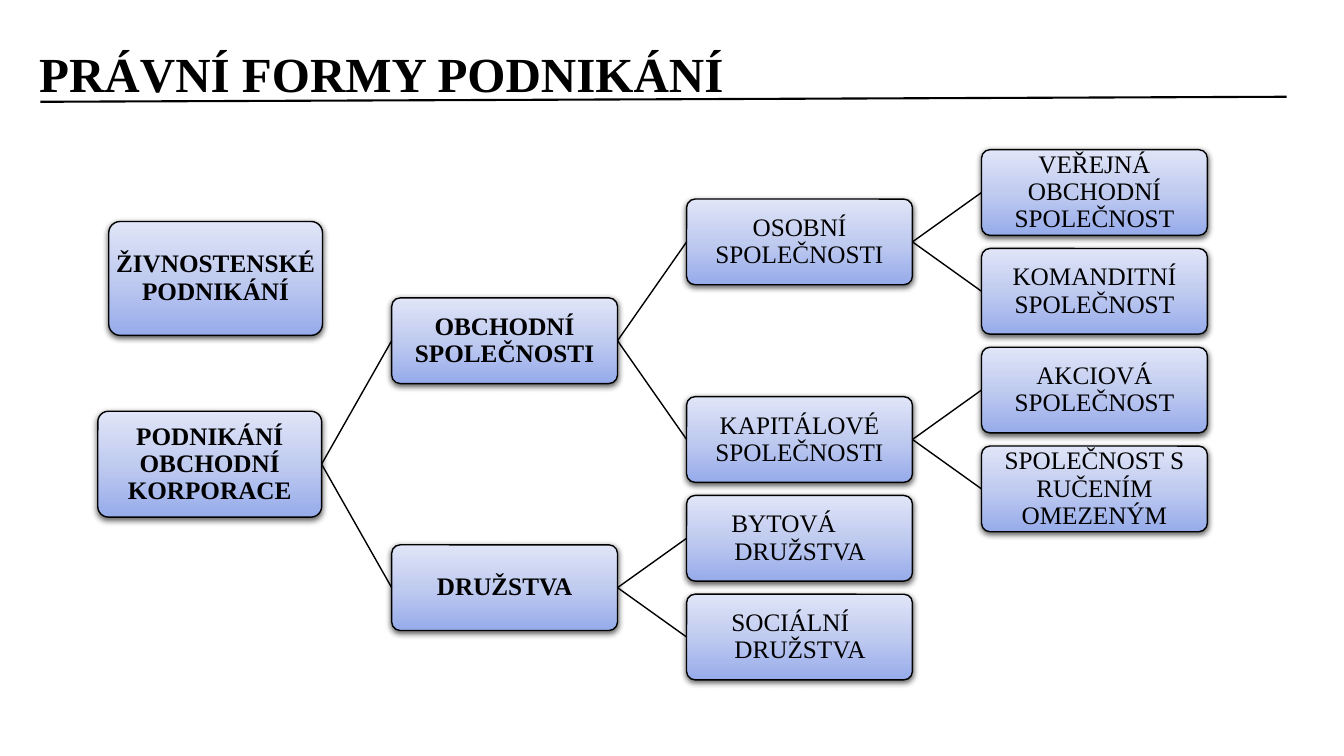
from copy import deepcopy
from dataclasses import dataclass
from typing import Optional

from lxml import etree
from pptx import Presentation, util as u
from pptx.dml.color import RGBColor
from pptx.enum import shapes, text
from pptx.oxml import ns

COLORS = {"ink": "000000", "deep": "96ABEA", "middle": "C0CBF0", "pale": "E0E5F7"}
FONT = "Times New Roman"

# Grid of box centres, in inches
FIRST_X, COLUMN = 2.08, 2.925
FIRST_Y, ROW = 1.91, 0.98
BOX_W, BOX_H = 2.24, 0.85


@dataclass(frozen=True)
class Form:
    """A legal form, centred on a column and a row of the grid."""
    label: str
    column: float
    row: float
    parent: Optional[str] = None
    bold: bool = False
    width: float = BOX_W
    height: float = BOX_H
    indent: float = 0


TRADE = "ŽIVNOSTENSKÉ PODNIKÁNÍ"
CORPORATE = "PODNIKÁNÍ OBCHODNÍ KORPORACE"
COMPANIES = "OBCHODNÍ SPOLEČNOSTI"
COOPERATIVES = "DRUŽSTVA"
PERSONAL = "OSOBNÍ SPOLEČNOSTI"
CAPITAL = "KAPITÁLOVÉ SPOLEČNOSTI"

FORMS = [
    Form(TRADE, 0.02, 0.87, bold=True, width=2.12, height=1.13),
    Form(CORPORATE, 0, 2.75, bold=True, width=2.22, height=1.05),
    Form(COMPANIES, 1, 1.5, CORPORATE, bold=True),
    Form(COOPERATIVES, 1, 4, CORPORATE, bold=True),
    Form(PERSONAL, 2, 0.5, COMPANIES),
    Form(CAPITAL, 2, 2.5, COMPANIES),
    Form("BYTOVÁ DRUŽSTVA", 2, 3.5, COOPERATIVES, indent=0.44),
    Form("SOCIÁLNÍ DRUŽSTVA", 2, 4.5, COOPERATIVES, indent=0.44),
    Form("VEŘEJNÁ OBCHODNÍ SPOLEČNOST", 3, 0, PERSONAL),
    Form("KOMANDITNÍ SPOLEČNOST", 3, 1, PERSONAL),
    Form("AKCIOVÁ SPOLEČNOST", 3, 2, CAPITAL),
    Form("SPOLEČNOST S RUČENÍM OMEZENÝM", 3, 3, CAPITAL),
]


def set_all(target, values: dict) -> None:
    for name, value in values.items():
        setattr(target, name, value)


def color(name: str) -> RGBColor:
    return RGBColor.from_string(COLORS[name])


def write(box, label: str, size: float, bold: bool, align, inset_x: float, inset_y: float):
    """Fill the box with one paragraph and return that paragraph."""
    frame = box.text_frame
    set_all(frame, {
        "word_wrap": True, "vertical_anchor": text.MSO_ANCHOR.MIDDLE,
        "margin_left": u.Inches(inset_x), "margin_right": u.Inches(inset_x),
        "margin_top": u.Inches(inset_y), "margin_bottom": u.Inches(inset_y),
    })
    para = frame.paragraphs[0]
    set_all(para, {"alignment": align, "line_spacing": 0.9})
    span = para.add_run()
    span.text = label
    set_all(span.font, {"name": FONT, "size": u.Pt(size), "bold": bold})
    span.font.color.rgb = color("ink")
    return para


def shade(box) -> None:
    """Give the box its three-stop gradient and soft shadow."""
    fill = box.fill
    fill.gradient()
    fill.gradient_angle = 90
    first = box._element.spPr.find(".//" + ns.qn("a:gs"))
    first.addnext(deepcopy(first))
    for stop, name, position in zip(fill.gradient_stops, ("deep", "middle", "pale"), (0, 0.5, 1)):
        stop.color.rgb = color(name)
        stop.position = position
    box.shadow.inherit = False
    effects = box._element.spPr.find(ns.qn("a:effectLst"))
    shadow = etree.SubElement(effects, ns.qn("a:outerShdw"), {
        "blurRad": str(u.Pt(4.5)), "dist": str(u.Pt(1.5)),
        "dir": "5400000", "algn": "ctr", "rotWithShape": "0"})
    tone = etree.SubElement(shadow, ns.qn("a:srgbClr"), val=COLORS["ink"])
    etree.SubElement(tone, ns.qn("a:alpha"), val="63000")


def add_form(page, form: Form):
    left = FIRST_X + form.column * COLUMN - form.width / 2
    top = FIRST_Y + form.row * ROW - form.height / 2
    box = page.shapes.add_shape(
        shapes.MSO_SHAPE.ROUNDED_RECTANGLE,
        *map(u.Inches, (left, top, form.width, form.height)))
    box.adjustments[0] = 0.1
    box.line.color.rgb = color("ink")
    box.line.width = u.Pt(1)
    shade(box)
    align = text.PP_ALIGN.LEFT if form.indent else text.PP_ALIGN.CENTER
    para = write(box, form.label, 18, form.bold, align, 0.01, 0.01)
    if form.indent:
        props = para._p.get_or_add_pPr()
        props.set("marL", str(u.Inches(form.indent)))
        props.set("indent", str(u.Inches(-0.03)))
    return box


def add_line(page, width: float, start=(0, 0), end=(0, 0)):
    line = page.shapes.add_connector(
        shapes.MSO_CONNECTOR.STRAIGHT, *map(u.Inches, (*start, *end)))
    line.line.color.rgb = color("ink")
    line.line.width = u.Pt(width)
    etree.SubElement(line._element.spPr, ns.qn("a:effectLst"))
    return line


def main() -> None:
    deck = Presentation()
    set_all(deck, {"slide_width": u.Inches(13.33), "slide_height": u.Inches(7.5)})
    page = deck.slides.add_slide(deck.slide_layouts[6])

    title = page.shapes.add_textbox(*map(u.Inches, (0.29, 0.43, 10.05, 0.67)))
    write(title, "PRÁVNÍ FORMY PODNIKÁNÍ", 35, True, text.PP_ALIGN.LEFT, 0.1, 0.05)

    boxes = {form.label: add_form(page, form) for form in FORMS}
    for form in FORMS:
        if form.parent:
            branch = add_line(page, 1)
            branch.begin_connect(boxes[form.parent], 3)
            branch.end_connect(boxes[form.label], 1)

    add_line(page, 1.5, (0.4, 1.01), (12.76, 0.96))
    deck.save("out.pptx")


if __name__ == "__main__":
    main()
